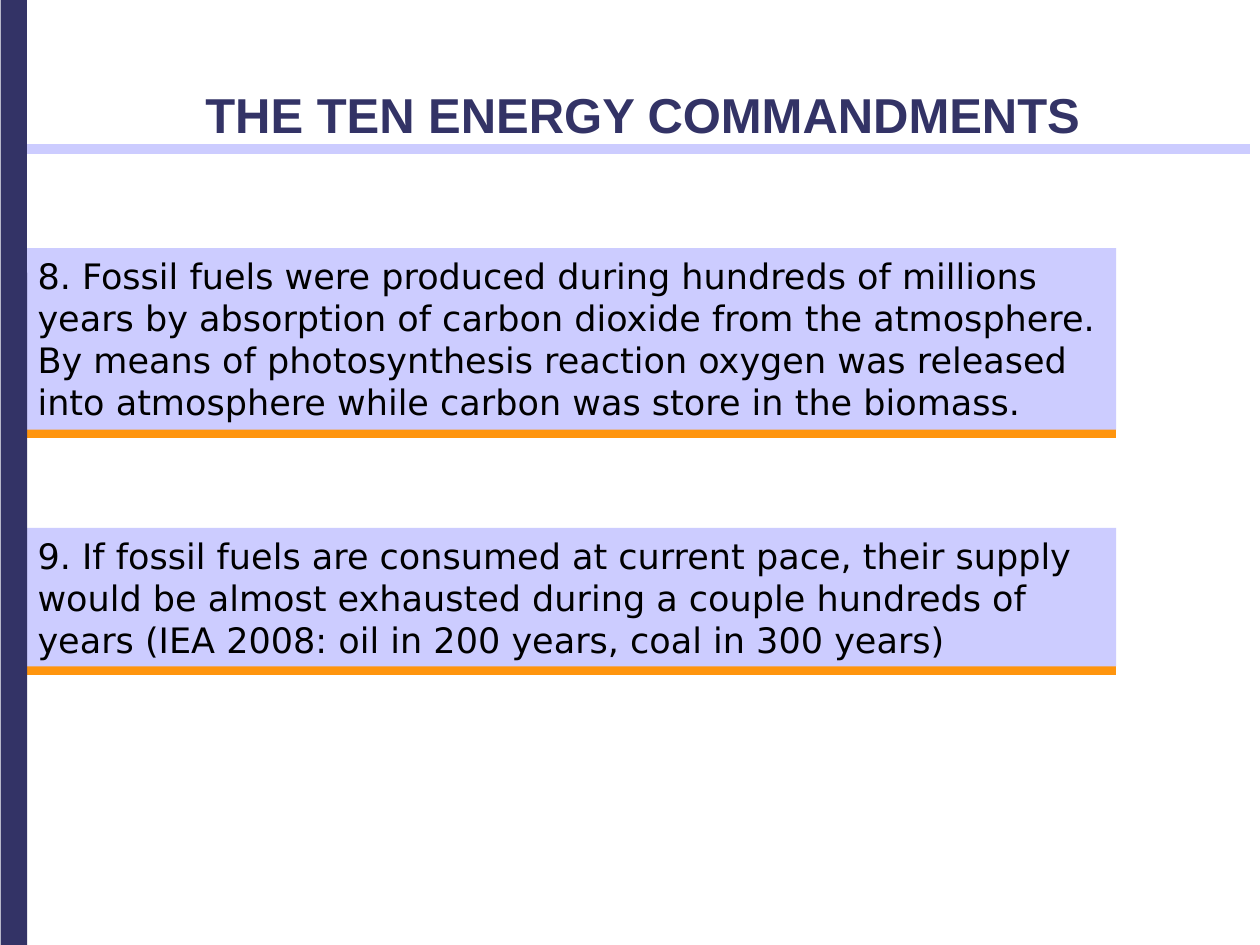
from dataclasses import dataclass

from lxml import etree
from pptx import Presentation
from pptx.dml.color import RGBColor as Color
from pptx.enum.shapes import MSO_CONNECTOR as Connector, MSO_SHAPE as Shape
from pptx.enum.text import MSO_ANCHOR as Anchor, MSO_AUTO_SIZE as AutoSize, PP_ALIGN as Align
from pptx.oxml.ns import qn
from pptx.util import Inches, Pt


@dataclass(frozen=True)
class Theme:
    navy: Color = Color.from_string("333366")
    lavender: Color = Color.from_string("CCCCFF")
    orange: Color = Color.from_string("FF950E")
    black: Color = Color.from_string("000000")
    title_font: str = "Arial"
    body_font: str = "DejaVu Sans"
    title_size: Pt = Pt(28)
    body_size: Pt = Pt(20)
    rule_width: Pt = Pt(5.67)


theme = Theme()


def add_rule(slide, left, right, y, color):
    rule = slide.shapes.add_connector(
        Connector.STRAIGHT, Inches(left), Inches(y), Inches(right), Inches(y))
    rule.line.color.rgb = color
    rule.line.width = theme.rule_width
    properties = rule.element.find(qn("p:spPr"))
    etree.SubElement(properties, qn("a:effectLst"))


def write_text(frame, text, font, size, color, align, bold=False):
    frame.word_wrap = True
    frame.auto_size = AutoSize.NONE
    frame.vertical_anchor = Anchor.TOP
    paragraph = frame.paragraphs[0]
    paragraph.alignment = align
    run = paragraph.add_run()
    run.text = text
    run.font.name = font
    run.font.size = size
    run.font.bold = bold
    run.font.color.rgb = color


presentation = Presentation()
presentation.slide_width = Inches(10)
presentation.slide_height = Inches(7.5)
slide = presentation.slides.add_slide(presentation.slide_layouts[5])

title = slide.shapes.title
title.left, title.top = Inches(0.2), Inches(0.59)
title.width, title.height = Inches(9.8), Inches(0.79)
write_text(title.text_frame, "THE TEN ENERGY COMMANDMENTS", theme.title_font,
           theme.title_size, theme.navy, Align.CENTER, bold=True)
title.text_frame.margin_top = Inches(0.08)
add_rule(slide, 0.08, 9.92, 1.18, theme.lavender)

panel_left, panel_width = 0.2, 8.66
commandments = [
    (1.97, 1.44,
     "8. Fossil fuels were produced during hundreds of millions years by absorption of "
     "carbon dioxide from the atmosphere. By means of photosynthesis reaction oxygen was "
     "released into atmosphere while carbon was store in the biomass."),
    (4.19, 1.1,
     "9. If fossil fuels are consumed at current pace, their supply would be almost "
     "exhausted during a couple hundreds of years (IEA 2008: oil in 200 years, coal in "
     "300 years)"),
]
for top, height, text in commandments:
    add_rule(slide, panel_left, panel_left + panel_width, top + height + 0.03, theme.orange)
    panel = slide.shapes.add_shape(
        Shape.RECTANGLE, Inches(panel_left), Inches(top), Inches(panel_width), Inches(height))
    panel.shadow.inherit = False
    panel.fill.solid()
    panel.fill.fore_color.rgb = theme.lavender
    panel.line.fill.background()
    write_text(panel.text_frame, text, theme.body_font, theme.body_size,
               theme.black, Align.LEFT)

side_bar = slide.shapes.add_shape(
    Shape.ROUNDED_RECTANGLE, Inches(0.01), Inches(0), Inches(0.2), Inches(7.5))
side_bar.adjustments[0] = 0.01
side_bar.shadow.inherit = False
side_bar.fill.solid()
side_bar.fill.fore_color.rgb = theme.navy
side_bar.line.color.rgb = theme.navy
side_bar.line.width = Pt(0.75)

presentation.save("out.pptx")
